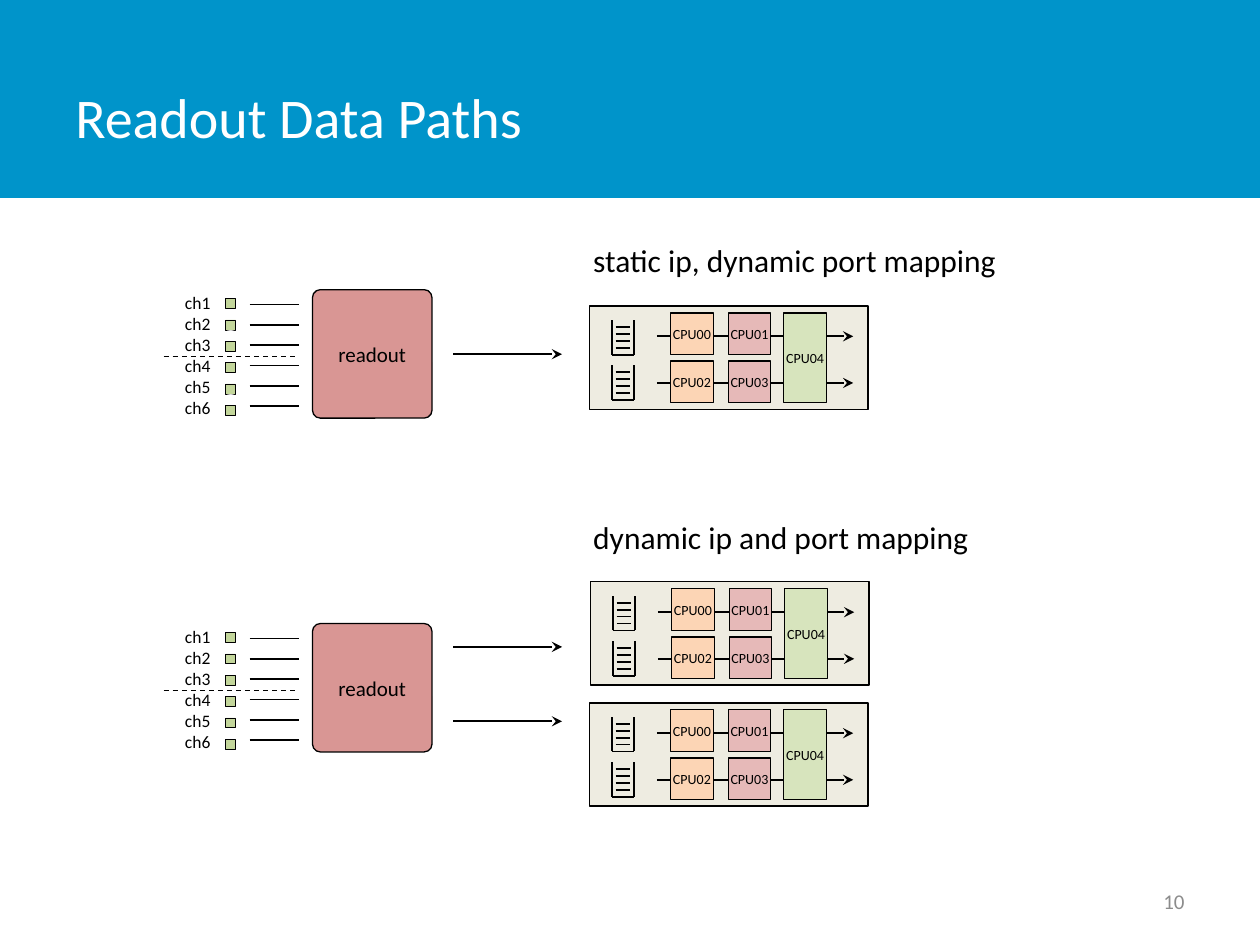
from dataclasses import dataclass

from lxml.etree import SubElement
from pptx import Presentation
from pptx.dml.color import RGBColor
from pptx.enum.dml import MSO_LINE
from pptx.enum.shapes import MSO_CONNECTOR, MSO_SHAPE
from pptx.enum.text import MSO_ANCHOR, PP_ALIGN
from pptx.oxml.ns import qn
from pptx.util import Cm, Pt


@dataclass(frozen=True)
class Theme:
    font: str = "Calibri"
    banner: str = "0094CA"
    white: str = "FFFFFF"
    ink: str = "000000"
    muted: str = "8C8C8C"
    readout: str = "D99694"
    channel: str = "C3D69B"
    node: str = "EEECE1"
    first_cpu: str = "FCD5B5"
    second_cpu: str = "E6B9B8"
    shared_cpu: str = "D7E4BD"
    title_size: int = 32
    heading_size: int = 18
    readout_size: int = 12
    channel_size: int = 10
    cpu_size: int = 8
    page_size: int = 12


THEME = Theme()

# All lengths are in centimetres.
TITLE = "Readout Data Paths"
PAGE_NUMBER = "10"
CHANNELS = ["ch1", "ch2", "ch3", "ch4", "ch5", "ch6"]
CPU_ROWS = [("CPU00", "CPU01"), ("CPU02", "CPU03")]
SHARED_CPU = "CPU04"
SCENARIOS = [
    {
        "heading": "static ip, dynamic port mapping",
        "heading_top": 4.72,
        "readout_top": 5.84,
        "arrows": [7.14],
        "nodes": [(11.89, 6.17)],
    },
    {
        "heading": "dynamic ip and port mapping",
        "heading_top": 10.31,
        "readout_top": 12.57,
        "arrows": [13.04, 14.54],
        "nodes": [(11.91, 11.73), (11.89, 14.17)],
    },
]

CHANNEL_PITCH = 0.43
LINK_PITCH = 0.41
CPU_WIDTH, CPU_HEIGHT, CPU_PITCH = 0.86, 0.84, 0.97
CPU_COLUMNS = [1.63, 2.79]
SHARED_COLUMN = 3.91
FLOW_PITCH = 0.94
QUEUE_PITCH = 0.91
RUNG_PITCH = 0.14
RUNGS = 4


def write(shape, text, size, color=THEME.ink, align=PP_ALIGN.LEFT,
          anchor=MSO_ANCHOR.TOP, side_inset=0.25):
    """Fill a shape with text, one paragraph per line."""
    frame = shape.text_frame
    frame.word_wrap = True
    frame.vertical_anchor = anchor
    frame.margin_left = frame.margin_right = Cm(side_inset)
    frame.margin_top = frame.margin_bottom = Cm(0.13)
    frame.text = text
    for paragraph in frame.paragraphs:
        paragraph.alignment = align
        paragraph.font.name = THEME.font
        paragraph.font.size = Pt(size)
        paragraph.font.color.rgb = RGBColor.from_string(color)


def add_text(slide, box, text, size, **style):
    write(slide.shapes.add_textbox(*map(Cm, box)), text, size, **style)


def add_block(slide, box, fill, text="", size=None, line_width=0.75,
              kind=MSO_SHAPE.RECTANGLE):
    block = slide.shapes.add_shape(kind, *map(Cm, box))
    block.shadow.inherit = False
    block.fill.solid()
    block.fill.fore_color.rgb = RGBColor.from_string(fill)
    if line_width:
        block.line.color.rgb = RGBColor.from_string(THEME.ink)
        block.line.width = Pt(line_width)
    else:
        block.line.fill.background()
    if text:
        write(block, text, size, align=PP_ALIGN.CENTER,
              anchor=MSO_ANCHOR.MIDDLE, side_inset=0)
    return block


def add_line(slide, x1, y1, x2, y2, width=1, arrow=False, dashed=False):
    connector = slide.shapes.add_connector(
        MSO_CONNECTOR.STRAIGHT, Cm(x1), Cm(y1), Cm(x2), Cm(y2))
    connector.line.color.rgb = RGBColor.from_string(THEME.ink)
    connector.line.width = Pt(width)
    if dashed:
        connector.line.dash_style = MSO_LINE.DASH
    if arrow:
        SubElement(connector.line._get_or_add_ln(), qn("a:tailEnd"), type="stealth")
    SubElement(connector._element.spPr, qn("a:effectLst"))


def add_readout(slide, top):
    """Draw the channels, their links and the readout block."""
    readout = add_block(slide, (6.3, top, 2.41, 2.59), THEME.readout, "readout",
                        THEME.readout_size, kind=MSO_SHAPE.ROUNDED_RECTANGLE)
    readout.adjustments[0] = 0.066
    add_text(slide, (3.48, top - 0.08, 1.09, 2.82), "\n".join(CHANNELS),
             THEME.channel_size)
    for index in range(len(CHANNELS)):
        add_block(slide, (4.55, top + 0.18 + index * CHANNEL_PITCH, 0.2, 0.2),
                  THEME.channel, line_width=0.25)
        link_y = top + 0.3 + index * LINK_PITCH
        add_line(slide, 5.03, link_y, 6.02, link_y)
    add_line(slide, 3.3, top + 1.35, 6.02, top + 1.35, width=0.75, dashed=True)


def add_queue(slide, left, top):
    """Draw an open-topped buffer with its entries."""
    right, bottom = left + 0.44, top + (RUNGS + 1) * RUNG_PITCH
    add_line(slide, right, bottom, right, top)
    add_line(slide, left, bottom, left, top)
    add_line(slide, left, bottom, right, bottom)
    for rung in range(1, RUNGS + 1):
        y = top + rung * RUNG_PITCH
        add_line(slide, left + 0.07, y, right - 0.07, y)


def add_node(slide, left, top):
    """Draw one receiving machine: queues, flows and CPUs."""
    add_block(slide, (left, top, 5.61, 2.08), THEME.node)
    for row, names in enumerate(CPU_ROWS):
        flow_y = top + 0.61 + row * FLOW_PITCH
        add_line(slide, left + 1.35, flow_y, left + 5.31, flow_y, arrow=True)
        cpu_top = top + 0.14 + row * CPU_PITCH
        for name, column, fill in zip(
                names, CPU_COLUMNS, (THEME.first_cpu, THEME.second_cpu)):
            add_block(slide, (left + column, cpu_top, CPU_WIDTH, CPU_HEIGHT),
                      fill, name, THEME.cpu_size)
        add_queue(slide, left + 0.45, top + 0.28 + row * QUEUE_PITCH)
    add_block(slide, (left + SHARED_COLUMN, top + 0.14, CPU_WIDTH,
                      CPU_PITCH + CPU_HEIGHT),
              THEME.shared_cpu, SHARED_CPU, THEME.cpu_size)


def main():
    deck = Presentation()
    deck.slide_width, deck.slide_height = Cm(25.4), Cm(19.05)
    slide = deck.slides.add_slide(deck.slide_layouts[6])

    add_block(slide, (0, 0, 25.4, 3.99), THEME.banner, line_width=0)
    add_text(slide, (1.27, 0.76, 19.84, 3.18), TITLE, THEME.title_size,
             color=THEME.white, anchor=MSO_ANCHOR.MIDDLE)
    add_text(slide, (18.2, 17.66, 5.93, 1.01), PAGE_NUMBER, THEME.page_size,
             color=THEME.muted, align=PP_ALIGN.RIGHT, anchor=MSO_ANCHOR.MIDDLE)

    for scenario in SCENARIOS:
        add_text(slide, (11.71, scenario["heading_top"], 10.2, 1.03),
                 scenario["heading"], THEME.heading_size)
        add_readout(slide, scenario["readout_top"])
        for y in scenario["arrows"]:
            add_line(slide, 9.14, y, 11.33, y, arrow=True)
        for left, top in scenario["nodes"]:
            add_node(slide, left, top)

    deck.save("out.pptx")


if __name__ == "__main__":
    main()
